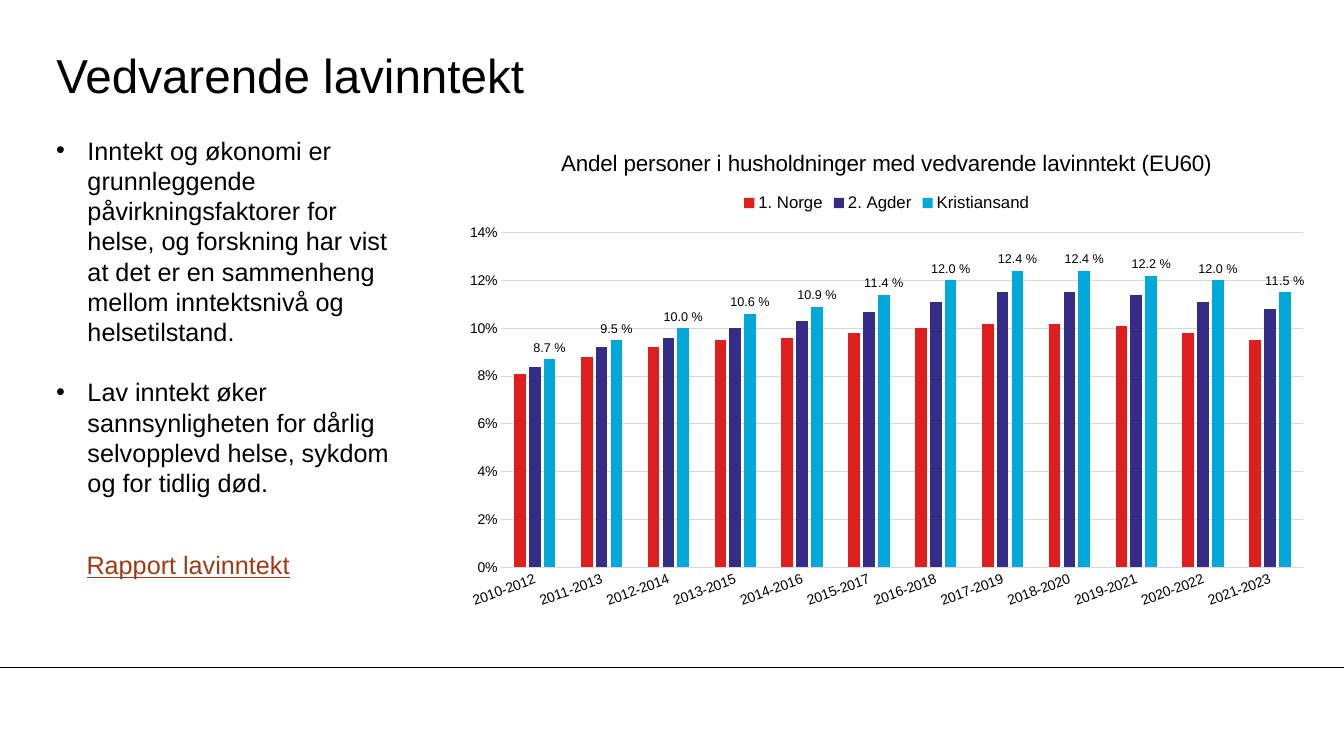
from dataclasses import dataclass

from lxml.etree import SubElement
from pptx import Presentation
from pptx.chart.data import CategoryChartData
from pptx.dml.color import RGBColor
from pptx.enum.chart import XL_CHART_TYPE, XL_LABEL_POSITION, XL_LEGEND_POSITION, XL_TICK_MARK
from pptx.enum.shapes import MSO_CONNECTOR
from pptx.enum.text import MSO_ANCHOR
from pptx.oxml import parse_xml
from pptx.oxml.ns import nsdecls, qn
from pptx.util import Inches, Pt


@dataclass(frozen=True)
class Theme:
    """Colours and type sizes of the slide."""
    font: str = "Arial"
    ink: str = "000000"
    link: str = "9F3A14"
    grid: str = "D9D9D9"
    norge: str = "DF1F1D"
    agder: str = "342C86"
    kristiansand: str = "00A9DA"
    title: int = 34
    body: int = 18
    chart_title: int = 16
    legend: int = 12
    axis: int = 10
    label: int = 9
    hairline: float = 0.75


THEME = Theme()
POINTS = [
    "Inntekt og økonomi er grunnleggende påvirkningsfaktorer for helse, og forskning har vist "
    "at det er en sammenheng mellom inntektsnivå og helsetilstand.",
    "Lav inntekt øker sannsynligheten for dårlig selvopplevd helse, sykdom og for tidlig død.",
]
PERIODS = [f"{year}-{year + 2}" for year in range(2010, 2022)]
SERIES = [
    ("1. Norge", THEME.norge,
     [0.081, 0.088, 0.092, 0.095, 0.096, 0.098, 0.1, 0.102, 0.102, 0.101, 0.098, 0.095]),
    ("2. Agder", THEME.agder,
     [0.084, 0.092, 0.096, 0.1, 0.103, 0.107, 0.111, 0.115, 0.115, 0.114, 0.111, 0.108]),
    ("Kristiansand", THEME.kristiansand,
     [0.087, 0.095, 0.1, 0.106, 0.109, 0.114, 0.12, 0.124, 0.124, 0.122, 0.12, 0.115]),
]


def style_font(font, size, color=THEME.ink):
    """Give a font its face, size and colour."""
    font.name = THEME.font
    font.size = Pt(size)
    font.bold = False
    font.color.rgb = RGBColor.from_string(color)


def style_line(line, color):
    """Make a line a thin rule of the given colour."""
    line.color.rgb = RGBColor.from_string(color)
    line.width = Pt(THEME.hairline)


def add_text_frame(slide, box):
    """Add a wrapping text box and return its text frame."""
    frame = slide.shapes.add_textbox(*map(Inches, box)).text_frame
    frame.word_wrap = True
    return frame


def add_title(slide, box, text):
    """Place the slide title, centred vertically and without margins."""
    frame = add_text_frame(slide, box)
    frame.vertical_anchor = MSO_ANCHOR.MIDDLE
    frame.margin_left = frame.margin_right = frame.margin_top = frame.margin_bottom = 0
    frame.text = text
    style_font(frame.paragraphs[0].font, THEME.title)


def add_points(slide, box, points):
    """Place the bulleted points with one line of space between them."""
    frame = add_text_frame(slide, box)
    for index, point in enumerate(points):
        para = frame.paragraphs[0] if index == 0 else frame.add_paragraph()
        para.text = point
        if index:
            para.space_before = Pt(21.5)
        properties = para._p.get_or_add_pPr()
        properties.set("marL", str(Inches(0.31)))
        properties.set("indent", str(-Inches(0.31)))
        SubElement(properties, qn("a:buFont"), typeface=THEME.font)
        SubElement(properties, qn("a:buChar"), char="•")
        style_font(para.font, THEME.body)


def add_report_label(slide, box, text):
    """Place the underlined report label."""
    frame = add_text_frame(slide, box)
    frame.text = text
    font = frame.paragraphs[0].font
    style_font(font, THEME.body, THEME.link)
    font.underline = True


def style_axes(chart):
    """Style both axes and the gridlines."""
    for axis in (chart.category_axis, chart.value_axis):
        axis.major_tick_mark = axis.minor_tick_mark = XL_TICK_MARK.NONE
        style_font(axis.tick_labels.font, THEME.axis)
    style_line(chart.category_axis.format.line, THEME.grid)
    chart.category_axis._element.find(qn("c:txPr")).find(qn("a:bodyPr")).set("rot", "-1200000")
    values = chart.value_axis
    values.minimum_scale, values.maximum_scale, values.major_unit = 0, 0.14, 0.02
    values.tick_labels.number_format = "0%"
    values.tick_labels.number_format_is_linked = False
    values.format.line.fill.background()
    style_line(values.major_gridlines.format.line, THEME.grid)


def fix_plot_area(chart, left, top, width, height):
    """Set the inner plot area as fractions of the chart."""
    area = chart._chartSpace.chart.plotArea
    for layout in area.findall(qn("c:layout")):
        area.remove(layout)
    parts = "".join(f'<c:{name} val="{value}"/>' for name, value in (
        ("layoutTarget", "inner"), ("xMode", "edge"), ("yMode", "edge"),
        ("x", left), ("y", top), ("w", width), ("h", height)))
    area.insert(0, parse_xml(
        f'<c:layout {nsdecls("c")}><c:manualLayout>{parts}</c:manualLayout></c:layout>'))


def add_income_chart(slide, box, title):
    """Place the clustered column chart of persistent low income."""
    data = CategoryChartData(number_format="0.0%")
    data.categories = PERIODS
    for name, _, values in SERIES:
        data.add_series(name, values)
    chart = slide.shapes.add_chart(
        XL_CHART_TYPE.COLUMN_CLUSTERED, *map(Inches, box), data).chart
    style_font(chart.font, THEME.axis)
    chart.has_title = True
    chart.chart_title.text_frame.text = title
    style_font(chart.chart_title.text_frame.paragraphs[0].font, THEME.chart_title)
    chart.chart_title.include_in_layout = False
    chart.has_legend = True
    chart.legend.position = XL_LEGEND_POSITION.TOP
    chart.legend.include_in_layout = False
    style_font(chart.legend.font, THEME.legend)
    style_axes(chart)
    fix_plot_area(chart, 0.056, 0.21, 0.924, 0.685)
    plot = chart.plots[0]
    plot.gap_width, plot.overlap, plot.vary_by_categories = 219, -27, False
    for series, (_, color, _) in zip(plot.series, SERIES):
        series.format.fill.solid()
        series.format.fill.fore_color.rgb = RGBColor.from_string(color)
        series.invert_if_negative = False
    labels = plot.series[-1].data_labels
    labels.show_value = True
    labels.number_format = "0.0\\ %"
    labels.number_format_is_linked = False
    labels.position = XL_LABEL_POSITION.OUTSIDE_END
    style_font(labels.font, THEME.label)


def add_footer_rule(slide, width, top):
    """Draw the rule across the foot of the slide."""
    rule = slide.shapes.add_connector(
        MSO_CONNECTOR.STRAIGHT, 0, Inches(top), Inches(width), Inches(top))
    style_line(rule.line, THEME.ink)
    SubElement(rule._element.spPr, qn("a:effectLst"))


def main():
    """Build and save the deck."""
    deck = Presentation()
    deck.slide_width, deck.slide_height = Inches(13.33), Inches(7.5)
    slide = deck.slides.add_slide(deck.slide_layouts[6])
    add_footer_rule(slide, 13.33, 6.62)
    add_title(slide, (0.56, 0.36, 11.1, 0.75), "Vedvarende lavinntekt")
    add_points(slide, (0.46, 1.29, 3.5, 3.74), POINTS)
    add_report_label(slide, (0.76, 5.4, 2.65, 0.4), "Rapport lavinntekt")
    add_income_chart(slide, (4.49, 1.29, 8.61, 4.85),
                     "Andel personer i husholdninger med vedvarende lavinntekt (EU60)")
    deck.save("out.pptx")


if __name__ == "__main__":
    main()
